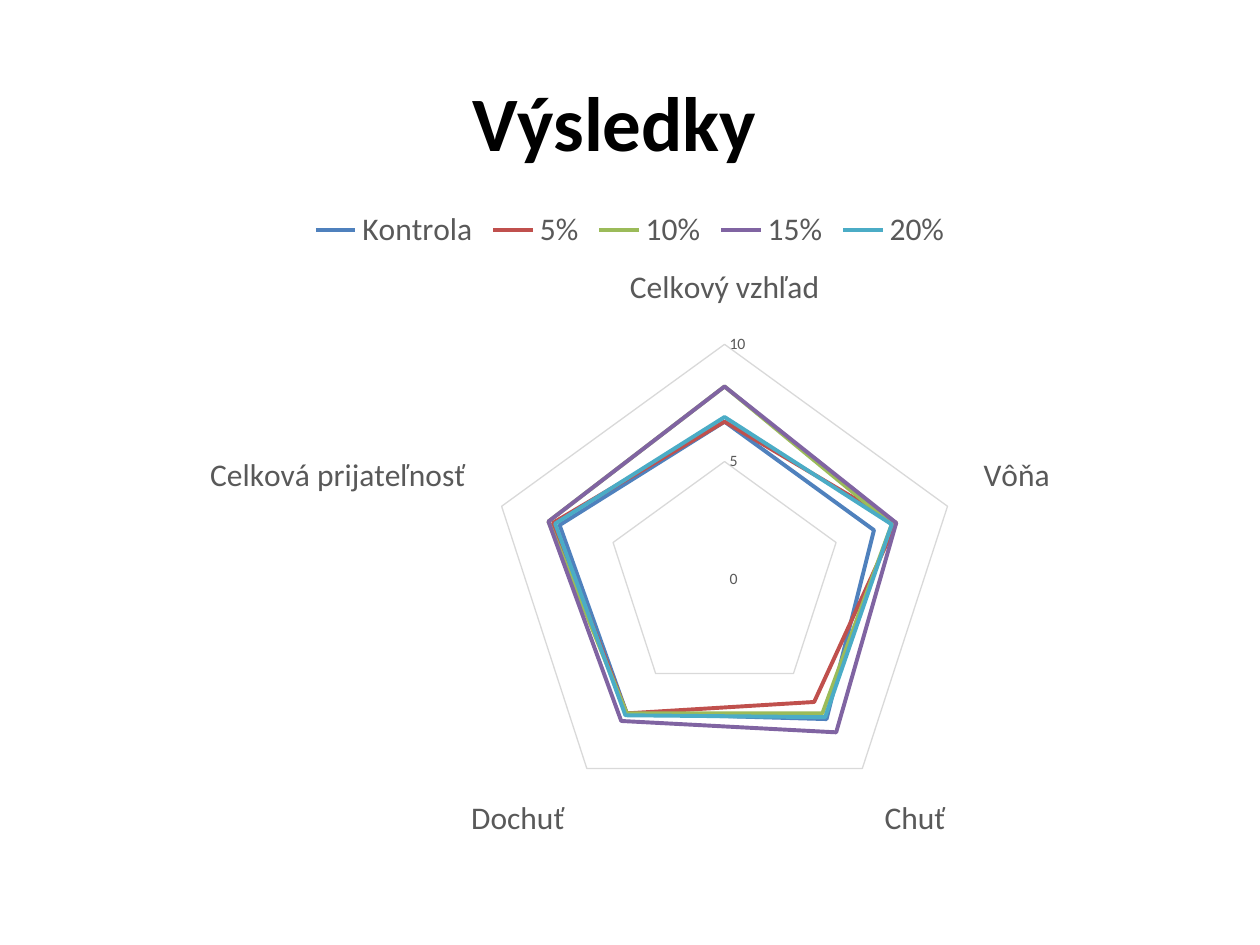
"""Build the results slide with a radar chart of sensory scores."""
import pptx
import pptx.chart.data
import pptx.dml.color
import pptx.enum.chart
import pptx.enum.text
import pptx.util
from pptx.util import Inches

FONT = "Calibri"
COLORS = {
    "title": "000000",
    "label": "595959",
    "grid": "D9D9D9",
    "Kontrola": "4F81BD",
    "5%": "C0504D",
    "10%": "9BBB59",
    "15%": "8064A2",
    "20%": "4BACC6",
}
CATEGORIES = ["Celkový vzhľad", "Vôňa", "Chuť", "Dochuť", "Celková prijateľnosť"]
SCORES = {
    "Kontrola": [6.7, 6.7, 7.4, 7.1, 7.4],
    "5%": [6.7, 7.7, 6.5, 7.1, 7.7],
    "10%": [8.2, 7.5, 7.1, 7.1, 7.9],
    "15%": [8.2, 7.7, 8.1, 7.5, 7.9],
    "20%": [6.9, 7.5, 7.3, 7.2, 7.6],
}


def rgb(name):
    """Return the named colour."""
    return pptx.dml.color.RGBColor.from_string(COLORS[name])


def style_font(font, size, color, bold=False):
    """Set the typeface, size, colour and weight of a font."""
    font.name = FONT
    font.size = pptx.util.Pt(size)
    font.bold = bold
    font.color.rgb = rgb(color)


def style_line(line, color, width):
    """Set the colour and width of a line."""
    line.color.rgb = rgb(color)
    line.width = pptx.util.Pt(width)


def place_title(page, text):
    """Move and format the title placeholder."""
    title = page.shapes.title
    title.left, title.top = Inches(2.17), Inches(0.76)
    title.width, title.height = Inches(5.42), Inches(0.39)
    frame = title.text_frame
    frame.text = text
    frame.auto_size = pptx.enum.text.MSO_AUTO_SIZE.NONE
    frame.vertical_anchor = pptx.enum.text.MSO_ANCHOR.MIDDLE
    para = frame.paragraphs[0]
    para.alignment = pptx.enum.text.PP_ALIGN.CENTER
    style_font(para.font, 44, "title", bold=True)


def style_axes(chart):
    """Format the category labels, the score scale and its gridlines."""
    for axis, size in ((chart.category_axis, 18), (chart.value_axis, 9)):
        axis.major_tick_mark = pptx.enum.chart.XL_TICK_MARK.NONE
        axis.minor_tick_mark = pptx.enum.chart.XL_TICK_MARK.NONE
        axis.has_major_gridlines = True
        style_line(axis.major_gridlines.format.line, "grid", 0.75)
        style_font(axis.tick_labels.font, size, "label")
    style_line(chart.category_axis.format.line, "grid", 0.75)
    scale = chart.value_axis
    scale.format.line.fill.background()
    scale.minimum_scale, scale.maximum_scale, scale.major_unit = 0, 10, 5
    scale.tick_labels.number_format = "General"
    scale.tick_labels.number_format_is_linked = False


def add_radar(page):
    """Add the radar chart with its legend on top."""
    data = pptx.chart.data.CategoryChartData(number_format="0.0")
    data.categories = CATEGORIES
    for name, values in SCORES.items():
        data.add_series(name, values)
    chart = page.shapes.add_chart(
        pptx.enum.chart.XL_CHART_TYPE.RADAR,
        Inches(1.34), Inches(1.55), Inches(7.32), Inches(5.2), data,
    ).chart
    style_font(chart.font, 10, "title")
    chart.has_title = False
    chart.has_legend = True
    chart.legend.position = pptx.enum.chart.XL_LEGEND_POSITION.TOP
    chart.legend.include_in_layout = False
    style_font(chart.legend.font, 18, "label")
    style_axes(chart)
    plot = chart.plots[0]
    plot.vary_by_categories = False
    for series in plot.series:
        style_line(series.format.line, series.name, 2.25)
        series.marker.style = pptx.enum.chart.XL_MARKER_STYLE.NONE


def main():
    """Build and save the deck."""
    deck = pptx.Presentation()
    deck.slide_width, deck.slide_height = Inches(10), Inches(7.5)
    page = deck.slides.add_slide(deck.slide_layouts[5])
    place_title(page, "Výsledky")
    add_radar(page)
    deck.save("out.pptx")


if __name__ == "__main__":
    main()
